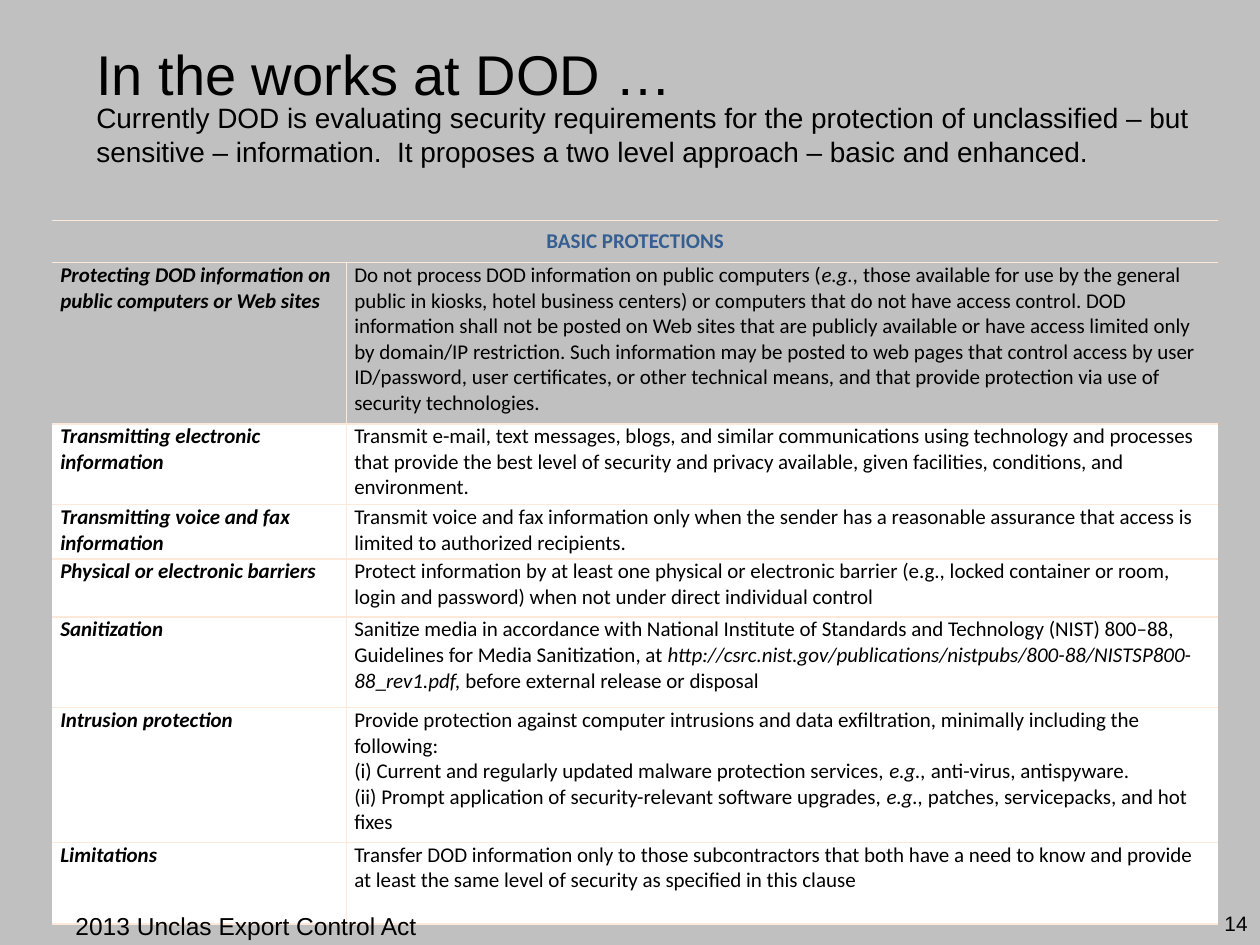
import pptx
import pptx.dml.color
import pptx.enum.text
import pptx.oxml
import pptx.util
from pptx.enum.text import MSO_ANCHOR, PP_ALIGN
from pptx.util import Pt

BLACK = "000000"
RULE = "FDE9D9"


def color(value):
    return pptx.dml.color.RGBColor.from_string(value)


def add_runs(paragraph, text, size, font, value=BLACK, bold=False, italic=False):
    """Add text as runs; pieces between asterisks switch the italics."""
    for index, piece in enumerate(text.split("*")):
        if piece:
            run = paragraph.add_run()
            run.text = piece
            run.font.size = Pt(size)
            run.font.name = font
            run.font.bold = bold
            run.font.italic = italic != (index % 2 == 1)
            run.font.color.rgb = color(value)


deck = pptx.Presentation()
deck.slide_width, deck.slide_height = Pt(720), Pt(540)
slide = deck.slides.add_slide(deck.slide_layouts[6])
slide.background.fill.solid()
slide.background.fill.fore_color.rgb = color("C0C0C0")

# Heading, introduction, slide number and footer
passages = [
    ((48, 18, 642, 48), "In the works at DOD …", 32, MSO_ANCHOR.MIDDLE, PP_ALIGN.LEFT),
    ((48, 54, 648, 48),
     "Currently DOD is evaluating security requirements for the protection of "
     "unclassified – but sensitive – information.  It proposes a two level "
     "approach – basic and enhanced.", 16, MSO_ANCHOR.TOP, PP_ALIGN.LEFT),
    ((681, 517, 39, 19.5), "14", 11.9, MSO_ANCHOR.TOP, PP_ALIGN.RIGHT),
    ((36, 517, 569.5, 19.5), "2013 Unclas Export Control Act", 14,
     MSO_ANCHOR.TOP, PP_ALIGN.LEFT),
]

# Table of basic protections: height, topic, paragraphs of the requirement
protections = [
    (92.2, "Protecting DOD information on public computers or Web sites", [
        "Do not process DOD information on public computers (*e.g., *those available "
        "for use by the general public in kiosks, hotel business centers) or computers "
        "that do not have access control. DOD information shall not be posted on Web "
        "sites that are publicly available or have access limited only by domain/IP "
        "restriction. Such information may be posted to web pages that control access "
        "by user ID/password, user certificates, or other technical means, and that "
        "provide protection via use of security technologies."]),
    (46.2, "Transmitting electronic information", [
        "Transmit e-mail, text messages, blogs, and similar communications using "
        "technology and processes that provide the best level of security and privacy "
        "available, given facilities, conditions, and environment."]),
    (31, "Transmitting voice and fax information", [
        "Transmit voice and fax information only when the sender has a reasonable "
        "assurance that access is limited to authorized recipients."]),
    (33.2, "Physical or electronic barriers", [
        "Protect information by at least one physical or electronic barrier (e.g., "
        "locked container or room, login and password) when not under direct "
        "individual control"]),
    (51.8, "Sanitization", [
        "Sanitize media in accordance with National Institute of Standards and "
        "Technology (NIST) 800–88, Guidelines for Media Sanitization, at "
        "*http://csrc.nist.gov/publications/nistpubs/800-88/NISTSP800-88*_*rev1.pdf, *"
        "before external release or disposal"]),
    (77, "Intrusion protection", [
        "Provide protection against computer intrusions and data exfiltration, "
        "minimally including the following:",
        "(i) Current and regularly updated malware protection services, *e.g., *"
        "anti-virus, antispyware.",
        "(ii) Prompt application of security-relevant software upgrades, *e.g., *"
        "patches, servicepacks, and hot fixes"]),
    (46.6, "Limitations", [
        "Transfer DOD information only to those subcontractors that both have a need "
        "to know and provide at least the same level of security as specified in this "
        "clause"]),
]

for (left, top, width, height), text, size, anchor, alignment in passages:
    passage = slide.shapes.add_textbox(Pt(left), Pt(top), Pt(width), Pt(height))
    frame = passage.text_frame
    frame.word_wrap = True
    frame.vertical_anchor = anchor
    frame.paragraphs[0].alignment = alignment
    add_runs(frame.paragraphs[0], text, size, "Arial")
footer = passage

protection_table = slide.shapes.add_table(
    len(protections) + 1, 2, Pt(30), Pt(126), Pt(666), Pt(402))
# The footer overlaps the last row and must stay in front of the table
footer._element.addprevious(protection_table._element)
table = protection_table.table
table.first_row = table.horz_banding = False
# The "No Style, No Grid" table style leaves all borders to the cells
table._tbl.tblPr[0].text = "{2D5ABB26-0587-4C30-8999-92F81FD0307C}"
table.columns[0].width, table.columns[1].width = Pt(168), Pt(498)

table.rows[0].height = Pt(24)
table.cell(0, 0).merge(table.cell(0, 1))
table.cell(0, 0).vertical_anchor = MSO_ANCHOR.MIDDLE
caption = table.cell(0, 0).text_frame.paragraphs[0]
caption.alignment = PP_ALIGN.CENTER
add_runs(caption, "BASIC PROTECTIONS", 12, "Calibri", "365F91", bold=True)

for row, (height, topic, requirements) in enumerate(protections, start=1):
    table.rows[row].height = Pt(height)
    add_runs(table.cell(row, 0).text_frame.paragraphs[0], topic, 12, "Calibri",
             bold=True, italic=True)
    requirement_frame = table.cell(row, 1).text_frame
    for index, requirement in enumerate(requirements):
        paragraph = (requirement_frame.add_paragraph() if index
                     else requirement_frame.paragraphs[0])
        add_runs(paragraph, requirement, 12, "Calibri")

for row in range(len(protections) + 1):
    for column in range(2):
        cell = table.cell(row, column)
        cell.margin_left = cell.margin_right = Pt(4.5)
        cell.margin_top = cell.margin_bottom = 0
        sides = ["lnL", "lnT", "lnB"] if row and column else ["lnT", "lnB"]
        for side in sides:
            cell._tc.get_or_add_tcPr().append(pptx.oxml.parse_xml(
                f'<a:{side} xmlns:a="http://schemas.openxmlformats.org/drawingml/2006/main" '
                f'w="{Pt(1)}"><a:solidFill><a:srgbClr val="{RULE}"/></a:solidFill></a:{side}>'))
        if row > 1:
            cell.fill.solid()
            cell.fill.fore_color.rgb = color("FFFFFF")
        else:
            cell.fill.background()

deck.save("out.pptx")
